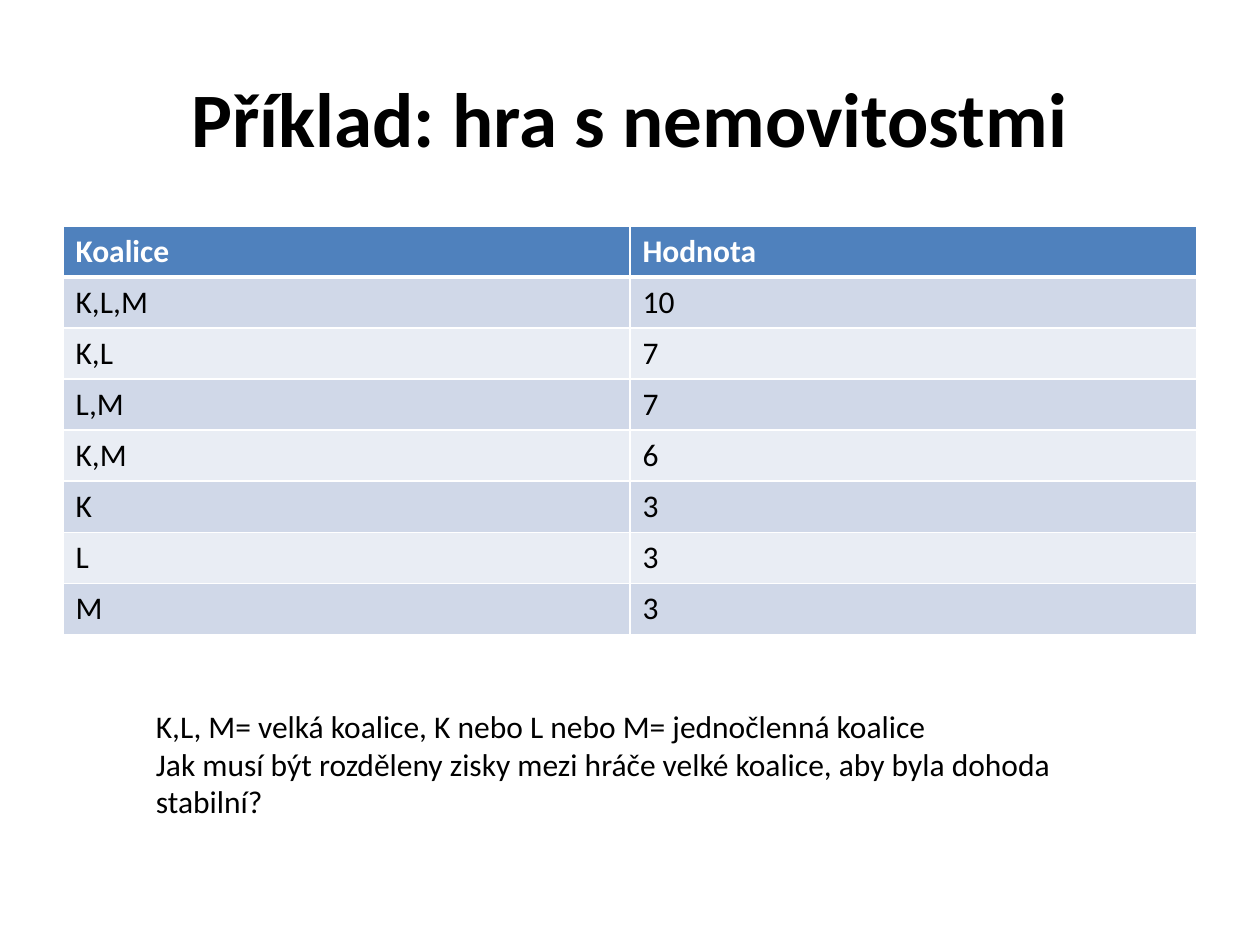
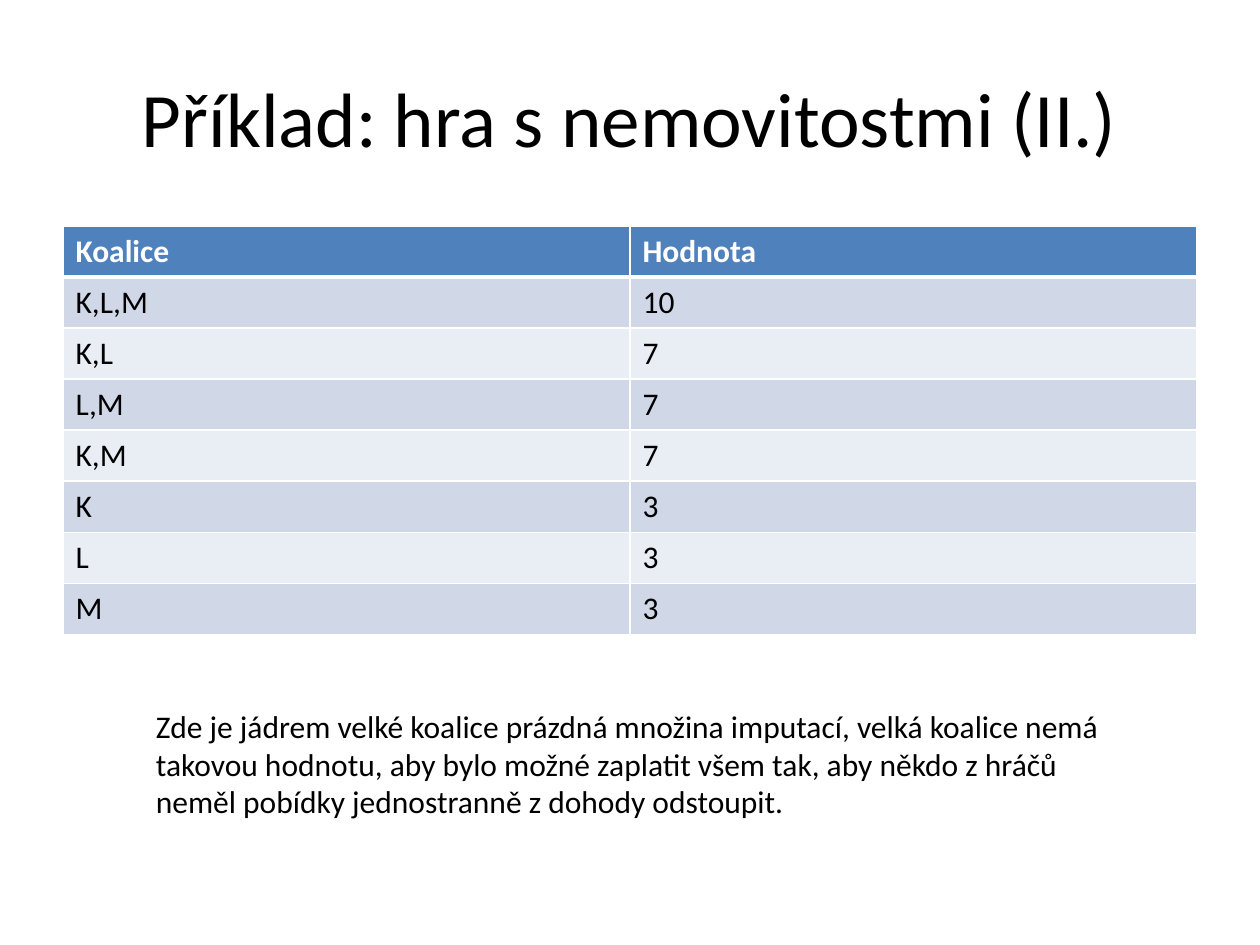
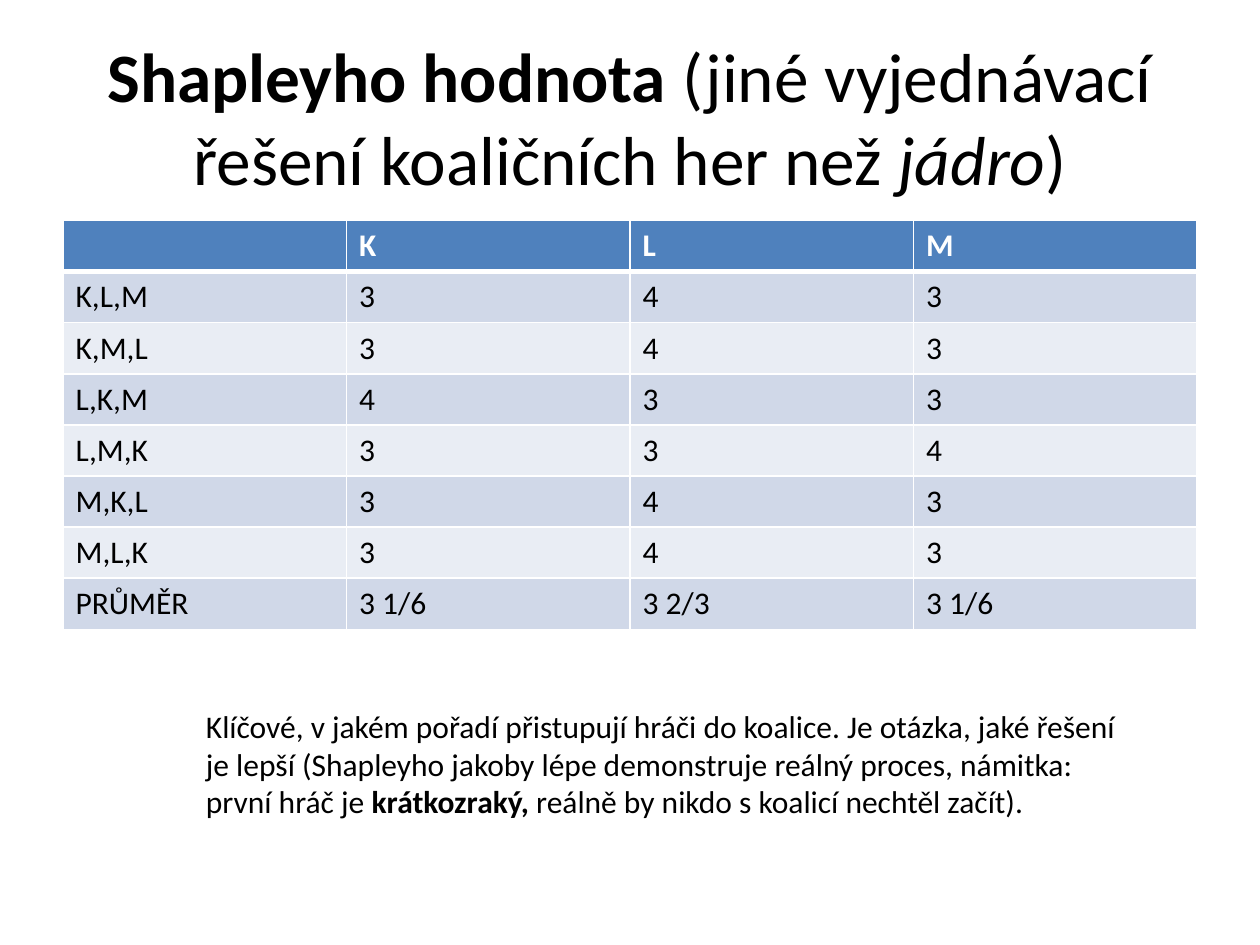
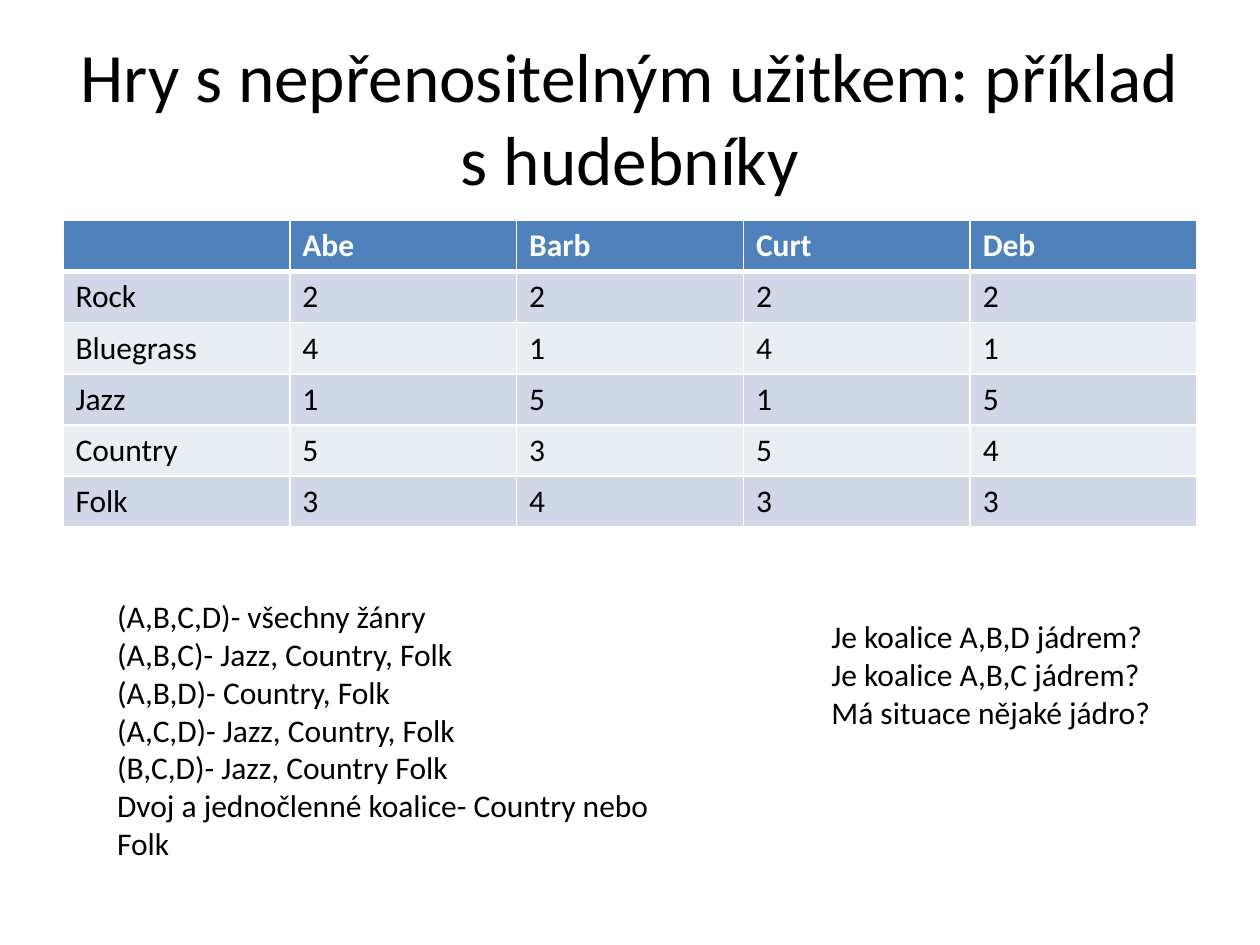
from dataclasses import dataclass

from lxml.etree import SubElement
from pptx import Presentation
from pptx.dml.color import RGBColor
from pptx.enum.text import MSO_ANCHOR, MSO_AUTO_SIZE, PP_ALIGN
from pptx.oxml.ns import qn
from pptx.util import Pt


@dataclass(frozen=True)
class Theme:
    font: str = "Calibri"
    text: str = "000000"
    header_text: str = "FFFFFF"
    header_fill: str = "4F81BD"
    bands: tuple = ("D0D8E8", "E9EDF4")
    border: str = "FFFFFF"
    thin: float = 1
    thick: float = 3
    title_size: float = 44
    long_title_size: float = 39.6
    body_size: float = 18
    margin: float = 36
    content_width: float = 648
    row_height: float = 29.2


class Deck:
    def __init__(self, theme):
        self.theme = theme
        self.presentation = Presentation()
        self.presentation.slide_width = Pt(720)
        self.presentation.slide_height = Pt(540)
        self.slide = None

    def add_slide(self):
        self.slide = self.presentation.slides.add_slide(self.presentation.slide_layouts[6])

    def add_runs(self, paragraph, runs, size, color=None):
        for text, style in runs:
            run = paragraph.add_run()
            run.text = text
            run.font.name = self.theme.font
            run.font.size = Pt(size)
            run.font.bold = "b" in style
            run.font.italic = "i" in style
            run.font.color.rgb = RGBColor.from_string(color or self.theme.text)

    def text_frame(self, left, top, width, height):
        frame = self.slide.shapes.add_textbox(Pt(left), Pt(top), Pt(width), Pt(height)).text_frame
        frame.word_wrap = True
        return frame

    def title(self, *runs, size=None):
        theme = self.theme
        frame = self.text_frame(theme.margin, 21.6, theme.content_width, 90)
        frame.vertical_anchor = MSO_ANCHOR.MIDDLE
        heading = frame.paragraphs[0]
        heading.alignment = PP_ALIGN.CENTER
        self.add_runs(heading, runs, size or theme.title_size)

    def note(self, left, top, width, height, *paragraphs):
        frame = self.text_frame(left, top, width, height)
        frame.auto_size = MSO_AUTO_SIZE.SHAPE_TO_FIT_TEXT
        for index, runs in enumerate(paragraphs):
            paragraph = frame.add_paragraph() if index else frame.paragraphs[0]
            self.add_runs(paragraph, runs, self.theme.body_size)

    def border(self, cell, side, width):
        properties = cell._tc.get_or_add_tcPr()
        line = SubElement(properties, qn(f"a:ln{side}"), w=str(Pt(width)))
        fill = SubElement(line, qn("a:solidFill"))
        SubElement(fill, qn("a:srgbClr"), val=self.theme.border)

    def table(self, top, rows):
        theme = self.theme
        grid = self.slide.shapes.add_table(
            len(rows), len(rows[0]), Pt(theme.margin), Pt(top),
            Pt(theme.content_width), Pt(theme.row_height * len(rows))).table
        for column in grid.columns:
            column.width = Pt(theme.content_width / len(rows[0]))
        for row_index, values in enumerate(rows):
            grid.rows[row_index].height = Pt(theme.row_height)
            is_header = row_index == 0
            fill = theme.header_fill if is_header else theme.bands[(row_index - 1) % 2]
            color = theme.header_text if is_header else theme.text
            thick_side = {0: "B", 1: "T"}.get(row_index)
            for column_index, value in enumerate(values):
                cell = grid.cell(row_index, column_index)
                for side in "LRTB":
                    self.border(cell, side, theme.thick if side == thick_side else theme.thin)
                cell.fill.solid()
                cell.fill.fore_color.rgb = RGBColor.from_string(fill)
                if value:
                    self.add_runs(cell.text_frame.paragraphs[0],
                                  [(value, "b" if is_header else "")], theme.body_size, color)


def plain(*lines):
    return [[(line, "")] for line in lines]


def coalition_values(pair_km):
    return [("Koalice", "Hodnota"), ("K,L,M", "10"), ("K,L", "7"), ("L,M", "7"),
            ("K,M", pair_km), ("K", "3"), ("L", "3"), ("M", "3")]


def main():
    theme = Theme()
    deck = Deck(theme)

    property_games = [
        (("Příklad: hra s nemovitostmi", "b"), "6",
         plain("K,L, M= velká koalice, K nebo L nebo M= jednočlenná koalice",
               "Jak musí být rozděleny zisky mezi hráče velké koalice, aby byla dohoda stabilní?")),
        (("Příklad: hra s nemovitostmi (II.)", ""), "7",
         plain("Zde je jádrem velké koalice prázdná množina imputací, velká koalice nemá "
               "takovou hodnotu, aby bylo možné zaplatit všem tak, aby někdo z hráčů "
               "neměl pobídky jednostranně z dohody odstoupit.")),
    ]
    for heading, pair_km, comments in property_games:
        deck.add_slide()
        deck.title(heading)
        deck.table(129, coalition_values(pair_km))
        deck.note(82, 400.3, 572.4, 72.7, *comments)

    deck.add_slide()
    deck.title(("Shapleyho hodnota ", "b"),
               ("(jiné vyjednávací řešení koaličních her než ", ""),
               ("jádro", "i"), (")", ""), size=theme.long_title_size)
    deck.table(126, [
        ("", "K", "L", "M"),
        ("K,L,M", "3", "4", "3"),
        ("K,M,L", "3", "4", "3"),
        ("L,K,M", "4", "3", "3"),
        ("L,M,K", "3", "3", "4"),
        ("M,K,L", "3", "4", "3"),
        ("M,L,K", "3", "4", "3"),
        ("PRŮMĚR", "3 1/6", "3 2/3", "3 1/6"),
    ])
    deck.note(110.6, 400.3, 538.6, 72.7, [
        ("Klíčové, v jakém pořadí přistupují hráči do koalice. Je otázka, jaké řešení je lepší "
         "(Shapleyho jakoby lépe demonstruje reálný proces, námitka: první hráč je ", ""),
        ("krátkozraký, ", "b"),
        ("reálně by nikdo s koalicí nechtěl začít).", ""),
    ])

    deck.add_slide()
    deck.title(("Hry s nepřenositelným užitkem: příklad s hudebníky", ""),
               size=theme.long_title_size)
    deck.table(126, [
        ("", "Abe", "Barb", "Curt", "Deb"),
        ("Rock", "2", "2", "2", "2"),
        ("Bluegrass", "4", "1", "4", "1"),
        ("Jazz", "1", "5", "1", "5"),
        ("Country", "5", "3", "5", "4"),
        ("Folk", "3", "4", "3", "3"),
    ])
    deck.note(59.8, 337.7, 351.4, 159.8, *plain(
        "(A,B,C,D)- všechny žánry",
        "(A,B,C)- Jazz, Country, Folk",
        "(A,B,D)- Country, Folk",
        "(A,C,D)- Jazz, Country, Folk",
        "(B,C,D)- Jazz, Country Folk",
        "Dvoj a jednočlenné koalice- Country nebo Folk"))
    deck.note(468, 349.2, 215.3, 72.7, *plain(
        "Je koalice A,B,D jádrem?",
        "Je koalice A,B,C jádrem?",
        "Má situace nějaké jádro?"))

    deck.presentation.save("out.pptx")


if __name__ == "__main__":
    main()
